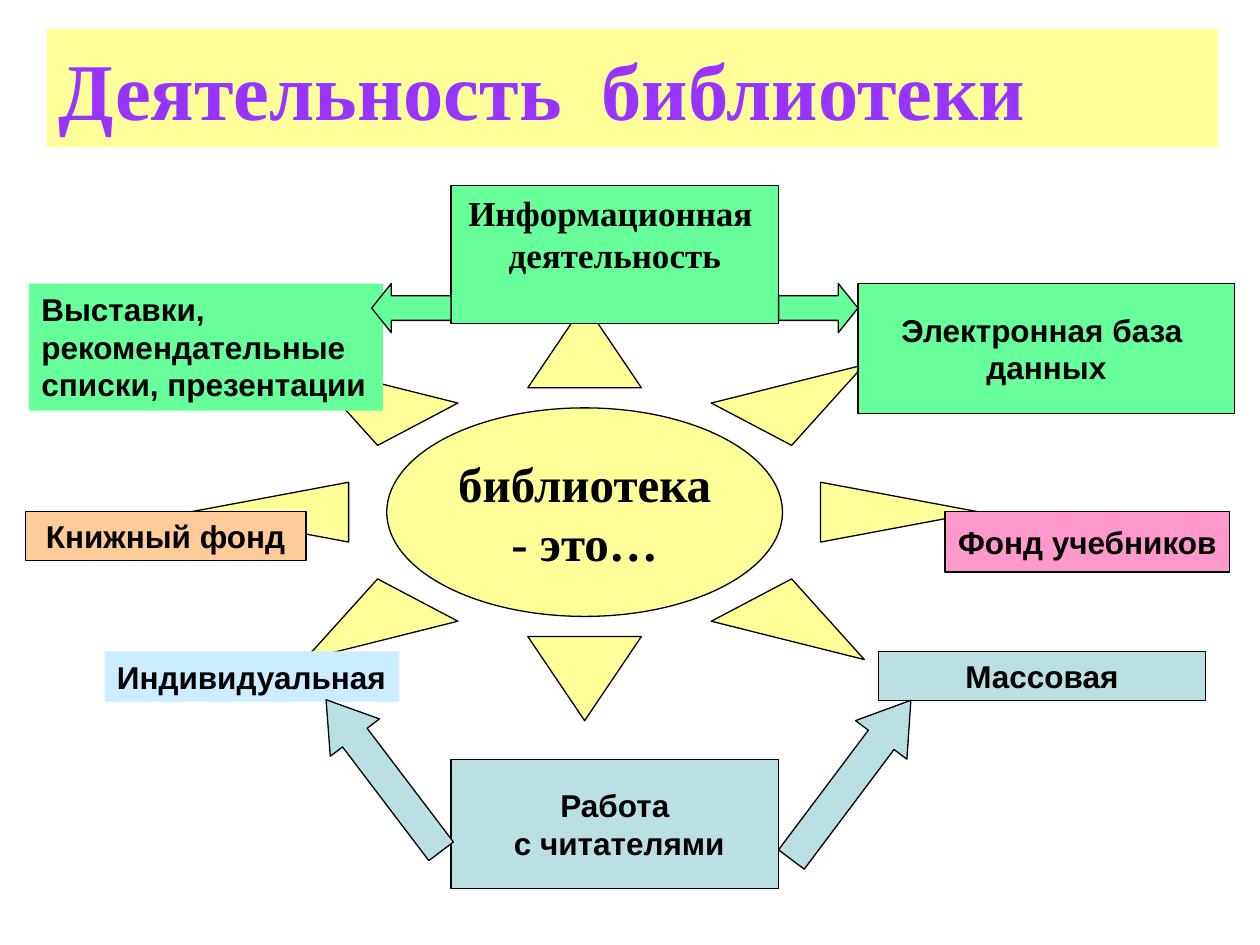
from pptx import Presentation
from pptx.dml.color import RGBColor
from pptx.enum.shapes import MSO_SHAPE as Kind
from pptx.enum.text import MSO_ANCHOR as Anchor, PP_ALIGN as Align
from pptx.util import Inches, Pt

BLACK = RGBColor(0x00, 0x00, 0x00)
PURPLE = RGBColor(0x99, 0x33, 0xFF)
YELLOW = RGBColor(0xFF, 0xFF, 0x99)
GREEN = RGBColor(0x66, 0xFF, 0x99)
PEACH = RGBColor(0xFF, 0xCC, 0x99)
PINK = RGBColor(0xFF, 0x99, 0xCC)
SKY = RGBColor(0xCC, 0xEC, 0xFF)
TEAL = RGBColor(0xBB, 0xE0, 0xE3)
SERIF = "Times New Roman"
LABEL = {"name": "Arial", "size": Pt(18), "bold": True}
HEAD = {"name": SERIF, "size": Pt(20), "bold": True}
CORE = {"name": SERIF, "size": Pt(28), "bold": True}
TITLE = {"name": SERIF, "size": Pt(46), "bold": True}


class Board:
    """Holds the style and the current slide of the library diagram."""

    def __init__(self, deck):
        self.slide = deck.slides.add_slide(deck.slide_layouts[6])
        self.edge = Pt(0.75)

    def shape(self, kind, spot, fill, line=True):
        form = self.slide.shapes.add_shape(kind, *map(Inches, spot))
        form.shadow.inherit = False
        form.fill.solid()
        form.fill.fore_color.rgb = fill
        if line:
            form.line.color.rgb = BLACK
            form.line.width = self.edge
        else:
            form.line.fill.background()
        return form

    def label(self, form, text, style, color=BLACK, align=Align.CENTER, anchor=Anchor.MIDDLE):
        frame = form.text_frame
        frame.word_wrap = True
        frame.vertical_anchor = anchor
        for count, words in enumerate(text.split("\n")):
            para = frame.add_paragraph() if count else frame.paragraphs[0]
            para.alignment = align
            run = para.add_run()
            run.text = words
            run.font.color.rgb = color
            for key, value in style.items():
                setattr(run.font, key, value)

    def box(self, text, spot, fill, style=LABEL, anchor=Anchor.MIDDLE):
        self.label(self.shape(Kind.RECTANGLE, spot, fill), text, style, anchor=anchor)

    def note(self, text, spot, fill, style=LABEL, color=BLACK, anchor=Anchor.TOP):
        form = self.shape(Kind.RECTANGLE, spot, fill, line=False)
        self.label(form, text, style, color, Align.LEFT, anchor)

    def sun(self, text, spot):
        self.label(self.shape(Kind.SUN, spot, YELLOW), text, CORE)

    def arrow(self, kind, spot, fill, head, turn=0):
        form = self.shape(kind, spot, fill)
        form.adjustments[1] = head
        form.rotation = turn


def main():
    deck = Presentation()
    deck.slide_width, deck.slide_height = Inches(10), Inches(7.5)
    board = Board(deck)
    board.note("Деятельность  библиотеки", (0.37, 0.23, 9.3, 0.94), YELLOW,
               TITLE, PURPLE, Anchor.MIDDLE)
    board.sun("библиотека - это…", (1.5, 2.41, 6.28, 3.31))
    board.box("Информационная \nдеятельность", (3.58, 1.47, 2.6, 1.1), GREEN, HEAD, Anchor.TOP)
    board.note("Выставки,\nрекомендательные списки, презентации",
               (0.23, 2.25, 2.81, 1.01), GREEN)
    board.note("Индивидуальная", (0.83, 5.17, 2.34, 0.4), SKY)
    for text, spot, fill in (
        ("Электронная база \nданных", (6.81, 2.25, 2.99, 1.03), GREEN),
        ("Книжный фонд", (0.2, 4.06, 2.23, 0.39), PEACH),
        ("Фонд учебников", (7.5, 4.06, 2.26, 0.48), PINK),
        ("Массовая", (6.97, 5.17, 2.6, 0.39), TEAL),
        ("Работа\n с читателями", (3.58, 6.03, 2.6, 1.02), TEAL),
    ):
        board.box(text, spot, fill)
    board.arrow(Kind.LEFT_ARROW, (2.95, 2.25, 0.63, 0.39), GREEN, 0.4)
    board.arrow(Kind.RIGHT_ARROW, (6.18, 2.25, 0.63, 0.39), GREEN, 0.4)
    board.arrow(Kind.UP_ARROW, (2.8, 5.4, 0.49, 1.51), TEAL, 0.77, -37.2)
    board.arrow(Kind.UP_ARROW, (6.5, 5.4, 0.51, 1.58), TEAL, 0.77, 36.9)
    deck.save("out.pptx")


if __name__ == "__main__":
    main()
